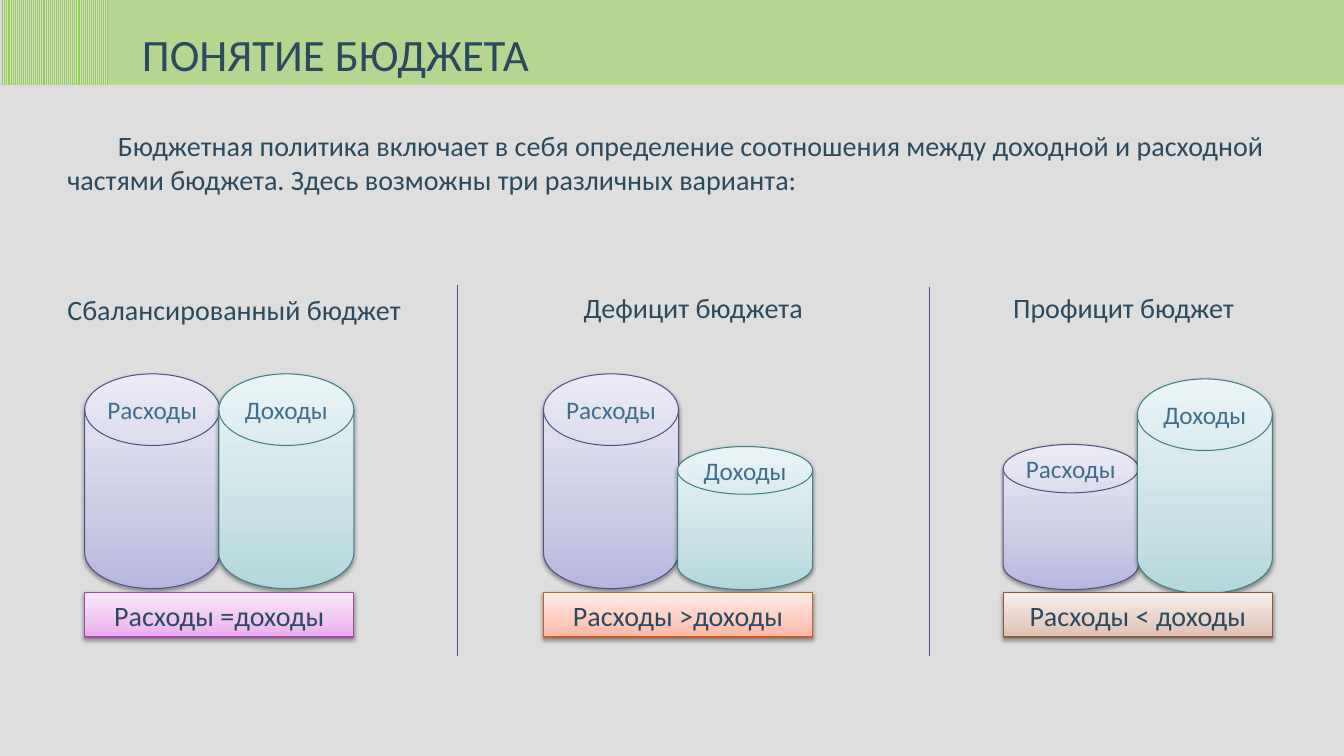
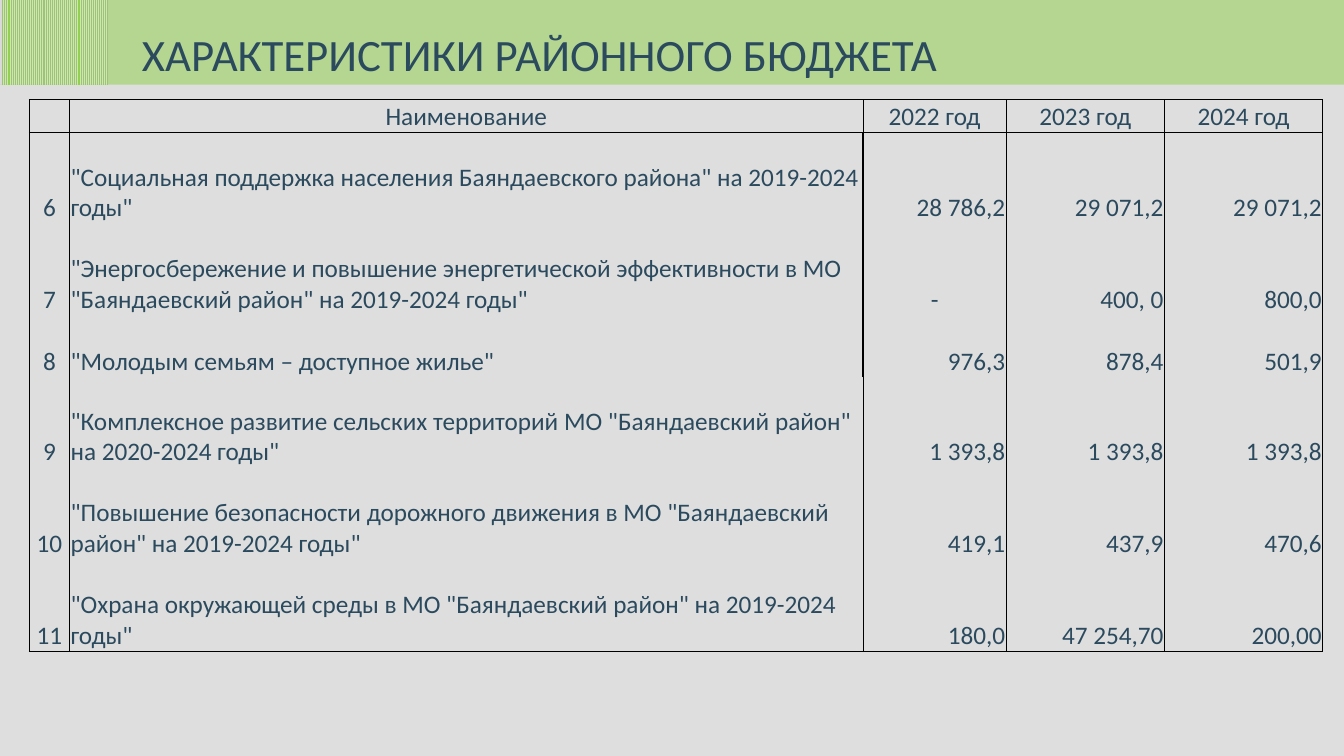
"""Build two slides on the district budget: its three variants and its programmes."""
from copy import deepcopy

from lxml.etree import SubElement
from pptx import Presentation
from pptx.dml.color import RGBColor
from pptx.enum.dml import MSO_PATTERN
from pptx.enum.shapes import MSO_CONNECTOR, MSO_SHAPE
from pptx.enum.text import MSO_ANCHOR, PP_ALIGN
from pptx.oxml.ns import qn
from pptx.util import Inches, Pt

FONT = "Calibri"
COLORS = {
    "background": "DEDEDE", "green": "92D050", "stripe": "D9D9D9",
    "text": "2B4A5E", "label": "406F8D", "divider": "505188", "black": "000000",
}
GRADIENTS = {
    "expense": (("B6B7DC", "CCCCE6", "EBEBF6"), "505188"),
    "income": (("B3D7DC", "CAE2E6", "EAF4F6"), "407F85"),
    "balanced": (("EAACED", "EFC5F1", "FAE8FB"), "9E49A2"),
    "deficit": (("FFB6A3", "FFCBBE", "FFEBE6"), "C36228"),
    "surplus": (("E0BEB0", "E8D1C8", "F7EDEA"), "8A5B3A"),
}
STOPS = (0, 0.35, 1)

CONCEPT_TITLE = "ПОНЯТИЕ БЮДЖЕТА"
INTRO = ("Бюджетная политика включает в себя определение соотношения между доходной "
         "и расходной частями бюджета. Здесь возможны три различных варианта:")
VARIANTS = [
    {"heading": "Сбалансированный бюджет", "heading_at": (0.57, 2.85, 3.7), "left": 0.84,
     "expense": (3.71, 2.13), "income": (3.71, 2.13),
     "formula": "Расходы =доходы", "palette": "balanced"},
    {"heading": "Дефицит бюджета", "heading_at": (5.69, 2.83, 2.6), "left": 5.39,
     "expense": (3.71, 2.13), "income": (4.43, 1.42),
     "formula": "Расходы >доходы", "palette": "deficit"},
    {"heading": "Профицит бюджет", "heading_at": (9.95, 2.83, 2.6), "left": 9.95,
     "expense": (4.41, 1.44), "income": (3.76, 2.13),
     "formula": "Расходы < доходы", "palette": "surplus"},
]
DISKS = (("expense", "Расходы"), ("income", "Доходы"))
DISK_WIDTH = 1.34
DIVIDERS = ((4.54, 2.83), (9.22, 2.85))
DIVIDER_BOTTOM = 6.51

TABLE_TITLE = "ХАРАКТЕРИСТИКИ РАЙОННОГО БЮДЖЕТА"
TABLE_LEFT = 0.29
TABLE_TOP = 0.99
COLUMNS = (0.4, 7.87, 1.42, 1.57, 1.57)
CENTER, LEFT, RIGHT = PP_ALIGN.CENTER, PP_ALIGN.LEFT, PP_ALIGN.RIGHT
ALIGNS = (CENTER, LEFT, RIGHT, RIGHT, RIGHT)
SECTIONS = [
    {"heights": (0.32,), "aligns": (CENTER,) * 5, "sides": "LRTB", "line": 0.5, "last": 0.5,
     "rows": [("", "Наименование", "2022 год", "2023 год", "2024 год")]},
    {"heights": (0.91, 0.91, 0.61), "aligns": ALIGNS, "sides": "LR", "line": 1, "last": 0,
     "rows": [
         ("6", '"Социальная поддержка населения Баяндаевского района" на 2019-2024 годы"',
          "28 786,2", "29 071,2", "29 071,2"),
         ("7", '"Энергосбережение и повышение энергетической эффективности в МО '
               '"Баяндаевский район" на 2019-2024 годы"', "-", "400, 0", "800,0"),
         ("8", '"Молодым семьям – доступное жилье"', "976,3", "878,4", "501,9")]},
    {"heights": (0.9, 0.91, 0.91), "aligns": ALIGNS, "sides": "LR", "line": 0.5, "last": 1,
     "rows": [
         ("9", '"Комплексное развитие сельских территорий МО "Баяндаевский район" '
               'на 2020-2024 годы"', "1 393,8", "1 393,8", "1 393,8"),
         ("10", '"Повышение безопасности дорожного движения в МО "Баяндаевский район" '
                'на 2019-2024 годы"', "419,1", "437,9", "470,6"),
         ("11", '"Охрана окружающей среды в МО "Баяндаевский район" на 2019-2024 годы"',
          "180,0", "47 254,70", "200,00")]},
]
NO_STYLE = "{2D5ABB26-0587-4C30-8999-92F81FD0307C}"


def rgb(name):
    return RGBColor.from_string(COLORS[name])


def write(tf, text, size, color="text", align=LEFT):
    tf.word_wrap = True
    p = tf.paragraphs[0]
    p.text = text
    p.alignment = align
    p.font.name = FONT
    p.font.size = Pt(size)
    p.font.color.rgb = rgb(color)
    return p


def add_text(s, box, text, size, color="text", align=LEFT):
    sp = s.shapes.add_textbox(*map(Inches, box))
    return sp.text_frame, write(sp.text_frame, text, size, color, align)


def add_band(s, width):
    sp = s.shapes.add_shape(MSO_SHAPE.RECTANGLE, 0, 0, Inches(width), Inches(0.84))
    sp.shadow.inherit = False
    sp.line.fill.background()
    return sp


def add_slide(prs, title):
    s = prs.slides.add_slide(prs.slide_layouts[6])
    s.background.fill.solid()
    s.background.fill.fore_color.rgb = rgb("background")
    band = add_band(s, 13.33)
    band.fill.solid()
    band.fill.fore_color.rgb = rgb("green")
    color = next(band._element.spPr.iter(qn("a:srgbClr")))
    SubElement(color, qn("a:alpha"), val="54000")
    stripes = add_band(s, 1.07)
    stripes.fill.patterned()
    stripes.fill.pattern = MSO_PATTERN.LIGHT_VERTICAL
    stripes.fill.fore_color.rgb = rgb("green")
    stripes.fill.back_color.rgb = rgb("stripe")
    add_text(s, (1.31, 0.22, 11.5, 0.64), title, 32)
    return s


def add_gradient_shape(s, kind, box, palette):
    sp = s.shapes.add_shape(kind, *map(Inches, box))
    fills, outline = GRADIENTS[palette]
    sp.fill.gradient()
    sp.fill.gradient_angle = 90
    stops = next(sp._element.spPr.iter(qn("a:gsLst")))
    stops.insert(1, deepcopy(stops[0]))
    for stop, position, color in zip(sp.fill.gradient_stops, STOPS, fills):
        stop.position = position
        stop.color.rgb = RGBColor.from_string(color)
    sp.line.color.rgb = RGBColor.from_string(outline)
    sp.line.width = Pt(0.75)
    sp.shadow.inherit = False
    shadow = SubElement(sp._element.spPr.find(qn("a:effectLst")), qn("a:outerShdw"),
                        blurRad=str(Pt(3.1)), dist=str(Pt(1.6)), dir="5400000", rotWithShape="0")
    color = SubElement(shadow, qn("a:srgbClr"), val=COLORS["black"])
    SubElement(color, qn("a:alpha"), val="38000")
    return sp


def add_disk(s, left, top, height, palette, label):
    add_gradient_shape(s, MSO_SHAPE.FLOWCHART_MAGNETIC_DISK,
                       (left, top, DISK_WIDTH, height), palette)
    tf, _ = add_text(s, (left, top, DISK_WIDTH, height / 3), label, 18, "label", CENTER)
    tf.margin_top = tf.margin_bottom = 0
    tf.vertical_anchor = MSO_ANCHOR.MIDDLE


def add_variant(s, variant):
    left, top, width = variant["heading_at"]
    add_text(s, (left, top, width, 0.44), variant["heading"], 20)
    for i, (kind, label) in enumerate(DISKS):
        add_disk(s, variant["left"] + i * (DISK_WIDTH - 0.01), *variant[kind], kind, label)
    sp = add_gradient_shape(s, MSO_SHAPE.RECTANGLE, (variant["left"], 5.88, 2.67, 0.44),
                            variant["palette"])
    write(sp.text_frame, variant["formula"], 20, align=CENTER)


def add_divider(s, x, top):
    line = s.shapes.add_connector(MSO_CONNECTOR.STRAIGHT, Inches(x), Inches(top),
                                  Inches(x), Inches(DIVIDER_BOTTOM))
    line.line.color.rgb = rgb("divider")
    line.line.width = Pt(0.75)
    SubElement(line._element.spPr, qn("a:effectLst"))


def set_borders(cell, widths):
    tcPr = cell._tc.get_or_add_tcPr()
    for i, side in enumerate("LRTB"):
        width = widths.get(side, 0)
        ln = SubElement(tcPr, qn(f"a:ln{side}"), w=str(Pt(width)))
        if width:
            fill = SubElement(ln, qn("a:solidFill"))
            SubElement(fill, qn("a:srgbClr"), val=COLORS["black"])
        else:
            SubElement(ln, qn("a:noFill"))
        tcPr.insert(i, ln)


def add_section(s, top, section):
    rows, heights = section["rows"], section["heights"]
    frame = s.shapes.add_table(len(rows), len(COLUMNS), Inches(TABLE_LEFT), Inches(top),
                               Inches(sum(COLUMNS)), Inches(sum(heights)))
    table = frame.table
    table.first_row = table.horz_banding = False
    table._tbl.tblPr.find(qn("a:tableStyleId")).text = NO_STYLE
    for column, width in zip(table.columns, COLUMNS):
        column.width = Inches(width)
    for i, (row, values, height) in enumerate(zip(table.rows, rows, heights)):
        row.height = Inches(height)
        borders = dict.fromkeys(section["sides"], section["line"])
        if i == len(rows) - 1:
            borders["B"] = section["last"]
        for cell, value, align in zip(row.cells, values, section["aligns"]):
            cell.fill.background()
            cell.margin_left = cell.margin_right = cell.margin_top = Inches(0.01)
            cell.margin_bottom = 0
            cell.vertical_anchor = MSO_ANCHOR.BOTTOM
            write(cell.text_frame, value, 18, align=CENTER if value == "-" else align)
            set_borders(cell, borders)


def main():
    prs = Presentation()
    prs.slide_width, prs.slide_height = Inches(13.33), Inches(7.5)

    s = add_slide(prs, CONCEPT_TITLE)
    _, p = add_text(s, (0.57, 1.23, 12.54, 0.77), INTRO, 20)
    p._p.get_or_add_pPr().set("indent", str(Inches(0.5)))
    for variant in VARIANTS:
        add_variant(s, variant)
    for x, top in DIVIDERS:
        add_divider(s, x, top)

    s = add_slide(prs, TABLE_TITLE)
    top = TABLE_TOP
    for section in SECTIONS:
        add_section(s, top, section)
        top += sum(section["heights"])

    prs.save("out.pptx")


if __name__ == "__main__":
    main()
